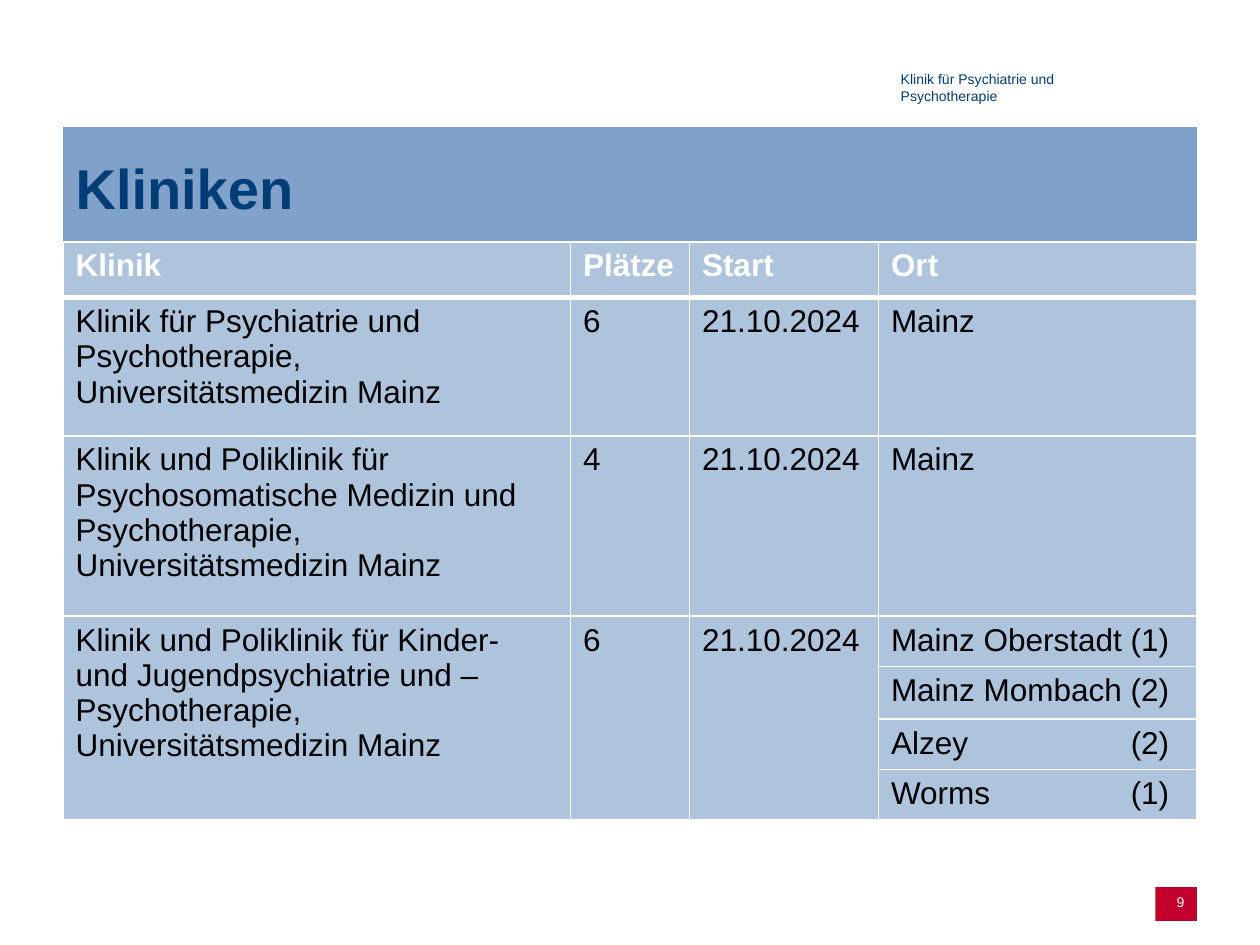
from dataclasses import dataclass
from itertools import product

from lxml import etree
from pptx import Presentation
from pptx.dml.color import RGBColor
from pptx.enum import shapes, text
from pptx.oxml import ns
from pptx.util import Pt


@dataclass(frozen=True)
class Theme:
    font: str = "Arial"
    navy: str = "003C76"
    blue: str = "80A1C9"
    pale: str = "AEC3DC"
    red: str = "C1002B"
    white: str = "FFFFFF"
    black: str = "000000"
    title_size: float = 32
    table_size: float = 18
    small_size: float = 8


@dataclass(frozen=True)
class Box:
    left: float
    top: float
    width: float
    height: float

    def lengths(self):
        return Pt(self.left), Pt(self.top), Pt(self.width), Pt(self.height)


@dataclass(frozen=True)
class Clinic:
    name: str
    places: int
    start: str
    locations: tuple[str, ...]


THEME = Theme()
TITLE_BOX = Box(36, 72.7, 648, 68.4)
DEPARTMENT_BOX = Box(507.6, 36.7, 147.6, 26.6)
NUMBER_BOX = Box(660.2, 506.9, 23.8, 19.4)
TABLE_BOX = Box(36, 138.2, 648, 327)
COLUMN_WIDTHS = (290, 68, 108, 182)
ROW_HEIGHTS = (32, 79, 103, 27.5, 30, 28, 27.5)
COUNT_TAB = 137
HEADINGS = ("Klinik", "Plätze", "Start", "Ort")
CLINICS = (
    Clinic("Klinik für Psychiatrie und Psychotherapie, Universitätsmedizin Mainz",
           6, "21.10.2024", ("Mainz",)),
    Clinic("Klinik und Poliklinik für Psychosomatische Medizin und Psychotherapie, "
           "Universitätsmedizin Mainz", 4, "21.10.2024", ("Mainz",)),
    Clinic("Klinik und Poliklinik für Kinder- und Jugendpsychiatrie und "
           "–Psychotherapie, Universitätsmedizin Mainz", 6, "21.10.2024",
           ("Mainz Oberstadt (1)", "Mainz Mombach (2)", "Alzey\t(2)", "Worms\t(1)")),
)


def write(frame, words: str, *, size: float, color: str, bold: bool = False,
          align=text.PP_ALIGN.LEFT, anchor=None) -> None:
    frame.word_wrap = True
    if anchor is not None:
        frame.vertical_anchor = anchor
    paragraph = frame.paragraphs[0]
    paragraph.alignment = align
    if "\t" in words:
        properties = paragraph._p.get_or_add_pPr()
        tabs = etree.SubElement(properties, ns.qn("a:tabLst"))
        etree.SubElement(tabs, ns.qn("a:tab"), pos=str(Pt(COUNT_TAB)), algn="l")
    run = paragraph.add_run()
    run.text = words
    run.font.name = THEME.font
    run.font.size = Pt(size)
    run.font.bold = bold
    run.font.color.rgb = RGBColor.from_string(color)


def paint(item, color: str) -> None:
    item.fill.solid()
    item.fill.fore_color.rgb = RGBColor.from_string(color)


def add_borders(cell, **widths: float) -> None:
    """Put white edges, named lnL, lnR, lnT and lnB, before the cell's fill."""
    properties = cell._tc.get_or_add_tcPr()
    for position, (edge, width) in enumerate(widths.items()):
        line = etree.Element(ns.qn(f"a:{edge}"), w=str(Pt(width)))
        fill = etree.SubElement(line, ns.qn("a:solidFill"))
        etree.SubElement(fill, ns.qn("a:srgbClr"), val=THEME.white)
        properties.insert(position, line)


def add_title(slide) -> None:
    title = slide.shapes.title
    title.left, title.top, title.width, title.height = TITLE_BOX.lengths()
    paint(title, THEME.blue)
    title.text_frame.auto_size = text.MSO_AUTO_SIZE.NONE
    write(title.text_frame, "Kliniken", size=THEME.title_size, color=THEME.navy,
          bold=True, anchor=text.MSO_ANCHOR.MIDDLE)


def add_department(slide) -> None:
    box = slide.shapes.add_textbox(*DEPARTMENT_BOX.lengths())
    write(box.text_frame, "Klinik für Psychiatrie und Psychotherapie",
          size=THEME.small_size, color=THEME.navy)


def add_slide_number(slide) -> None:
    badge = slide.shapes.add_shape(shapes.MSO_SHAPE.RECTANGLE, *NUMBER_BOX.lengths())
    badge.shadow.inherit = False
    badge.line.fill.background()
    paint(badge, THEME.red)
    write(badge.text_frame, "9", size=THEME.small_size, color=THEME.white,
          align=text.PP_ALIGN.RIGHT, anchor=text.MSO_ANCHOR.TOP)


def add_clinic_table(slide) -> None:
    table = slide.shapes.add_table(
        len(ROW_HEIGHTS), len(COLUMN_WIDTHS), *TABLE_BOX.lengths()).table
    for column, width in zip(table.columns, COLUMN_WIDTHS):
        column.width = Pt(width)
    for row, height in zip(table.rows, ROW_HEIGHTS):
        row.height = Pt(height)
    for row, column in product(range(len(ROW_HEIGHTS)), range(len(COLUMN_WIDTHS))):
        cell = table.cell(row, column)
        paint(cell, THEME.pale)
        add_borders(cell, lnL=1, lnR=1, lnT=3 if row == 1 else 1,
                    lnB=3 if row == 0 else 1)
    for column, heading in enumerate(HEADINGS):
        write(table.cell(0, column).text_frame, heading, size=THEME.table_size,
              color=THEME.white, bold=True)
    first = 1
    for clinic in CLINICS:
        last = first + len(clinic.locations) - 1
        for column, value in enumerate((clinic.name, clinic.places, clinic.start)):
            cell = table.cell(first, column)
            if last > first:
                cell.merge(table.cell(last, column))
            write(cell.text_frame, str(value), size=THEME.table_size, color=THEME.black)
        for row, location in enumerate(clinic.locations, first):
            write(table.cell(row, 3).text_frame, location, size=THEME.table_size,
                  color=THEME.black)
        first = last + 1


def main() -> None:
    presentation = Presentation()
    presentation.slide_width, presentation.slide_height = Pt(720), Pt(540)
    slide = presentation.slides.add_slide(presentation.slide_layouts[5])
    add_department(slide)
    add_title(slide)
    add_slide_number(slide)
    add_clinic_table(slide)
    presentation.save("out.pptx")


if __name__ == "__main__":
    main()
